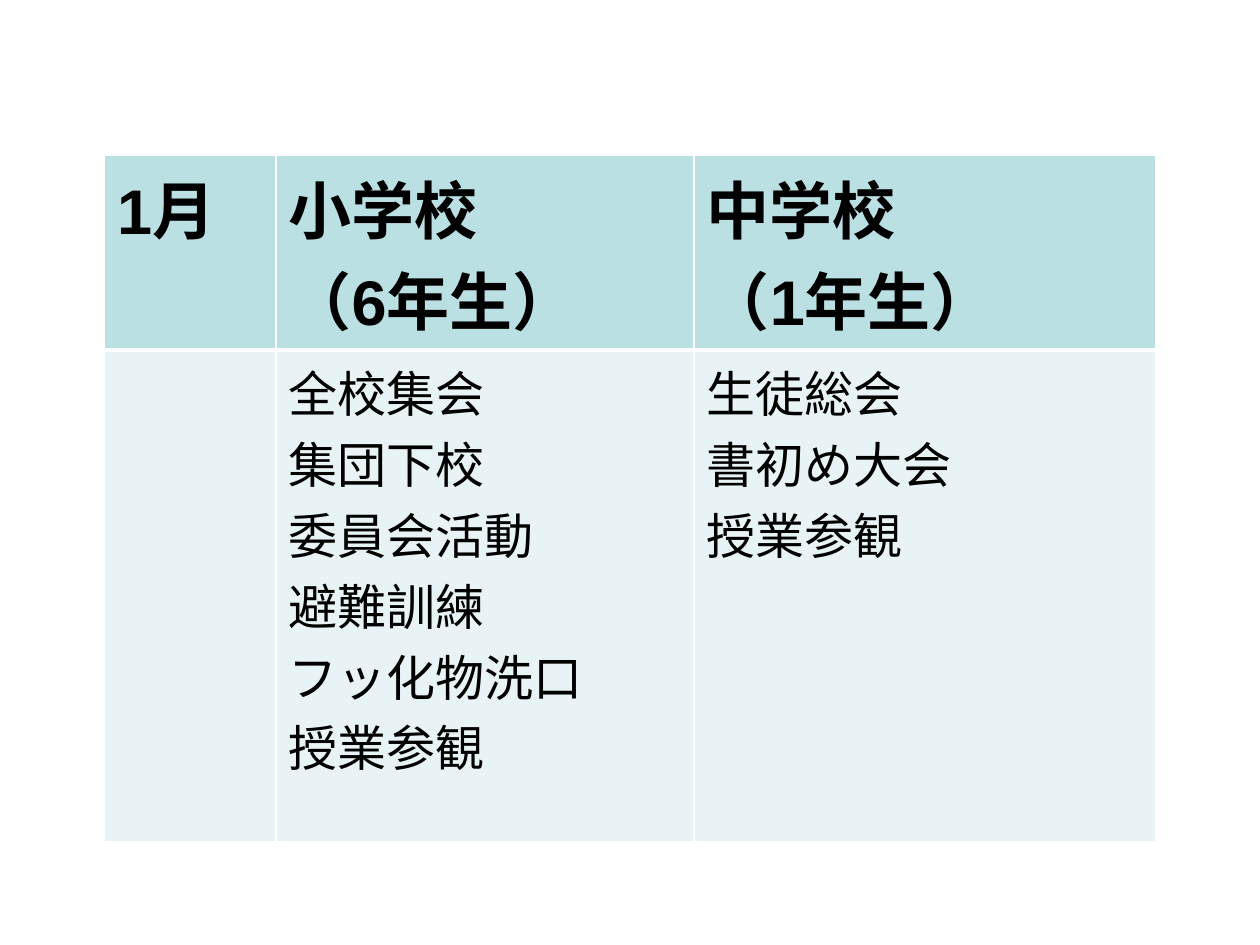
from lxml import etree
from pptx import Presentation
from pptx.dml.color import RGBColor
from pptx.oxml.ns import qn
from pptx.util import Inches, Pt

HEADER_FILL, BODY_FILL = "BBE0E3", "E7F3F4"
COL_WIDTHS = [1.36, 3.32, 3.66]
ROW_HEIGHTS = [1.53, 3.9]
ROWS = [
    [["1月"], ["小学校", "（6年生）"], ["中学校", "（1年生）"]],
    [
        [],
        ["全校集会", "集団下校", "委員会活動", "避難訓練", "フッ化物洗口", "授業参観"],
        ["生徒総会", "書初め大会", "授業参観"],
    ],
]


def write(tf, lines, size=28, bold=False, color="000000", font="Arial"):
    """Put each line in a paragraph of its own."""
    for i, line in enumerate(lines):
        p = tf.paragraphs[0] if i == 0 else tf.add_paragraph()
        r = p.add_run()
        r.text = line
        r.font.name = font
        r.font.size = Pt(size)
        r.font.bold = bold
        r.font.color.rgb = RGBColor.from_string(color)


def set_borders(cell, color="FFFFFF", **widths):
    """Draw cell borders; widths are points by side: L, R, T, B."""
    tcPr = cell._tc.get_or_add_tcPr()
    for i, (side, width) in enumerate(widths.items()):
        ln = etree.Element(qn(f"a:ln{side}"), w=str(Pt(width)))
        fill = etree.SubElement(ln, qn("a:solidFill"))
        etree.SubElement(fill, qn("a:srgbClr"), val=color)
        tcPr.insert(i, ln)


prs = Presentation()
prs.slide_width, prs.slide_height = Inches(10), Inches(7.5)
s = prs.slides.add_slide(prs.slide_layouts[6])

table = s.shapes.add_table(
    len(ROW_HEIGHTS), len(COL_WIDTHS), Inches(0.83), Inches(1.23),
    Inches(sum(COL_WIDTHS)), Inches(sum(ROW_HEIGHTS)),
).table
table.horz_banding = False
for col, width in zip(table.columns, COL_WIDTHS):
    col.width = Inches(width)

for i, (row, height) in enumerate(zip(table.rows, ROW_HEIGHTS)):
    row.height = Inches(height)
    header = i == 0
    for cell, lines in zip(row.cells, ROWS[i]):
        cell.fill.solid()
        cell.fill.fore_color.rgb = RGBColor.from_string(HEADER_FILL if header else BODY_FILL)
        # The thick rule is shared by the header's bottom and the body's top.
        set_borders(cell, L=1, R=1, T=1 if header else 3, B=3 if header else 1)
        write(cell.text_frame, lines, size=36 if header else 28, bold=header)

prs.save("out.pptx")
